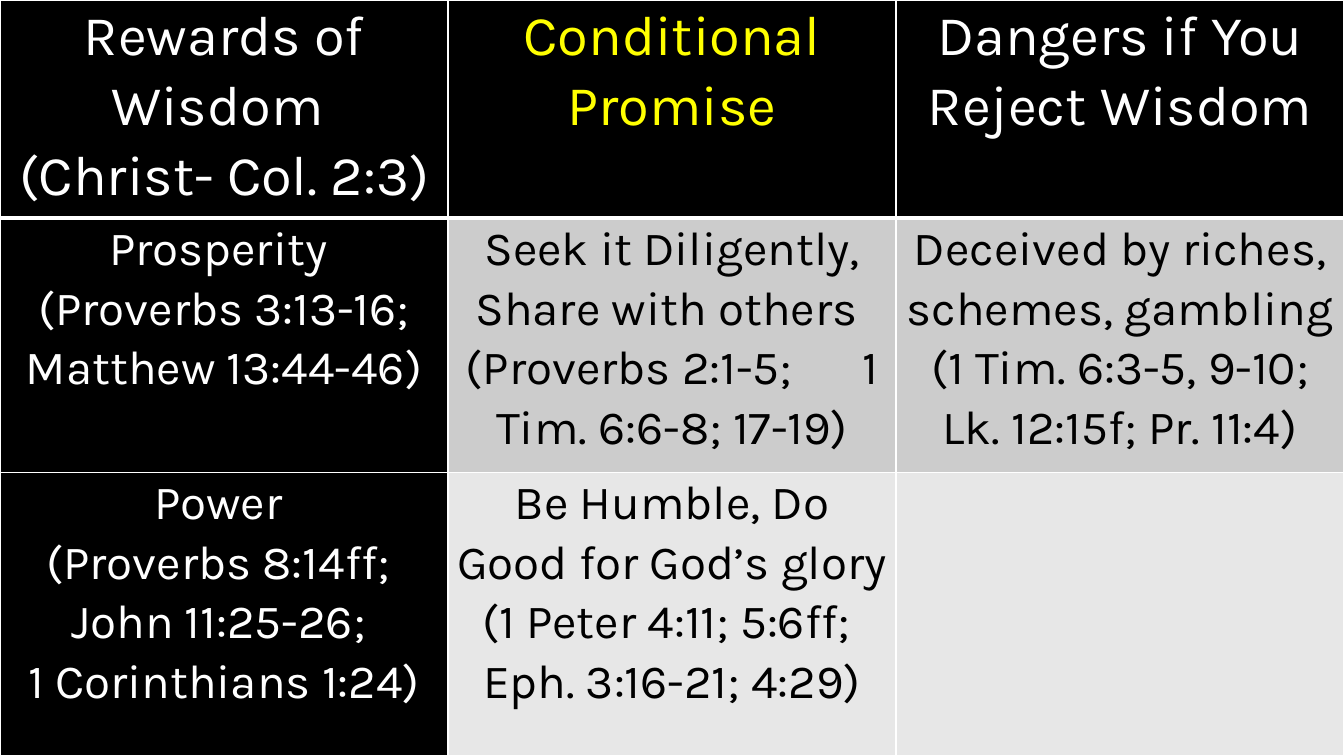
import dataclasses

import pptx
import pptx.dml.color
import pptx.enum.text
import pptx.oxml
import pptx.oxml.ns
import pptx.util


@dataclasses.dataclass(frozen=True)
class Theme:
    font: str = "Karla"
    header_size: int = 40
    body_size: int = 34
    line_spacing: float = 1.07
    dark: str = "000000"
    light: str = "FFFFFF"
    accent: str = "FFFF00"
    bands: tuple = ("CCCCCC", "E7E7E7")
    thin: float = 1
    thick: float = 3


def rgb(value):
    return pptx.dml.color.RGBColor.from_string(value)


def add_text(para, text, *, font, size, color, tracking=None):
    span = para.add_run()
    span.text = text
    span.font.name = font
    span.font.size = pptx.util.Pt(size)
    span.font.color.rgb = rgb(color)
    if tracking:
        span._r.get_or_add_rPr().set("spc", str(tracking * 100))


class SlideBuilder:
    def __init__(self, deck, theme):
        self.theme = theme
        self.page = deck.slides.add_slide(deck.slide_layouts[6])
        fill = self.page.background.fill
        fill.solid()
        fill.fore_color.rgb = rgb(theme.dark)

    def border(self, cell, side, width):
        cell._tc.get_or_add_tcPr().append(pptx.oxml.parse_xml(
            f'<a:ln{side} {pptx.oxml.ns.nsdecls("a")} w="{pptx.util.Pt(width)}">'
            f'<a:solidFill><a:srgbClr val="{self.theme.light}"/></a:solidFill>'
            f'</a:ln{side}>'))

    def cell(self, cell, lines, size, color, fill, top, bottom):
        theme = self.theme
        widths = {"L": theme.thin, "R": theme.thin, "T": top, "B": bottom}
        for side, width in widths.items():
            self.border(cell, side, width)
        cell.fill.solid()
        cell.fill.fore_color.rgb = rgb(fill)
        cell.margin_left = cell.margin_right = pptx.util.Cm(0.18)
        cell.margin_top = cell.margin_bottom = 0
        frame = cell.text_frame
        for index, line in enumerate(lines):
            para = frame.add_paragraph() if index else frame.paragraphs[0]
            para.alignment = pptx.enum.text.PP_ALIGN.CENTER
            para.line_spacing = theme.line_spacing
            spans = [(line, None)] if isinstance(line, str) else line
            for text, tracking in spans:
                add_text(para, text, font=theme.font, size=size,
                         color=color, tracking=tracking)

    def table(self, rows, heights, width):
        theme = self.theme
        columns = len(rows[0])
        grid = self.page.shapes.add_table(
            len(rows), columns, 0, 0, width, pptx.util.Cm(sum(heights))).table
        grid.first_row = grid.horz_banding = False
        for column in grid.columns:
            column.width = width // columns
        for r, (lines_by_column, height) in enumerate(zip(rows, heights)):
            grid.rows[r].height = pptx.util.Cm(height)
            for c, lines in enumerate(lines_by_column):
                header = r == 0
                dark = header or c == 0
                color = theme.light if dark else theme.dark
                if header and c == 1:
                    color = theme.accent
                self.cell(
                    grid.cell(r, c), lines,
                    size=theme.header_size if header else theme.body_size,
                    color=color,
                    fill=theme.dark if dark else theme.bands[r - 1],
                    top=theme.thick if r == 1 else theme.thin,
                    bottom=theme.thick if header else theme.thin)


ROWS = [
    [["Rewards of Wisdom ", "(Christ- Col. 2:3)"],
     ["Conditional Promise"],
     ["Dangers if You Reject Wisdom"]],
    [["Prosperity ", "(Proverbs 3:13-16; Matthew 13:44-46)"],
     ["Seek it Diligently, Share with others ",
      [("(Proverbs 2:1-5;", None), (" ", 42), ("1 Tim. 6:6-8; 17-19)", None)]],
     ["Deceived by riches, schemes, gambling ",
      "(1 Tim. 6:3-5, 9-10; Lk. 12:15f; Pr. 11:4)"]],
    [["Power ", "(Proverbs 8:14ff; ", "John 11:25-26; ", "1 Corinthians 1:24)"],
     ["Be Humble, Do Good for God’s glory (1 Peter 4:11; 5:6ff; ",
      "Eph. 3:16-21; 4:29)"],
     []],
]


def main():
    deck = pptx.Presentation()
    deck.slide_width = pptx.util.Cm(33.87)
    deck.slide_height = pptx.util.Cm(19.05)
    builder = SlideBuilder(deck, Theme())
    builder.table(ROWS, heights=[5.5, 6.4, 7.15], width=deck.slide_width)
    deck.save("out.pptx")


if __name__ == "__main__":
    main()
